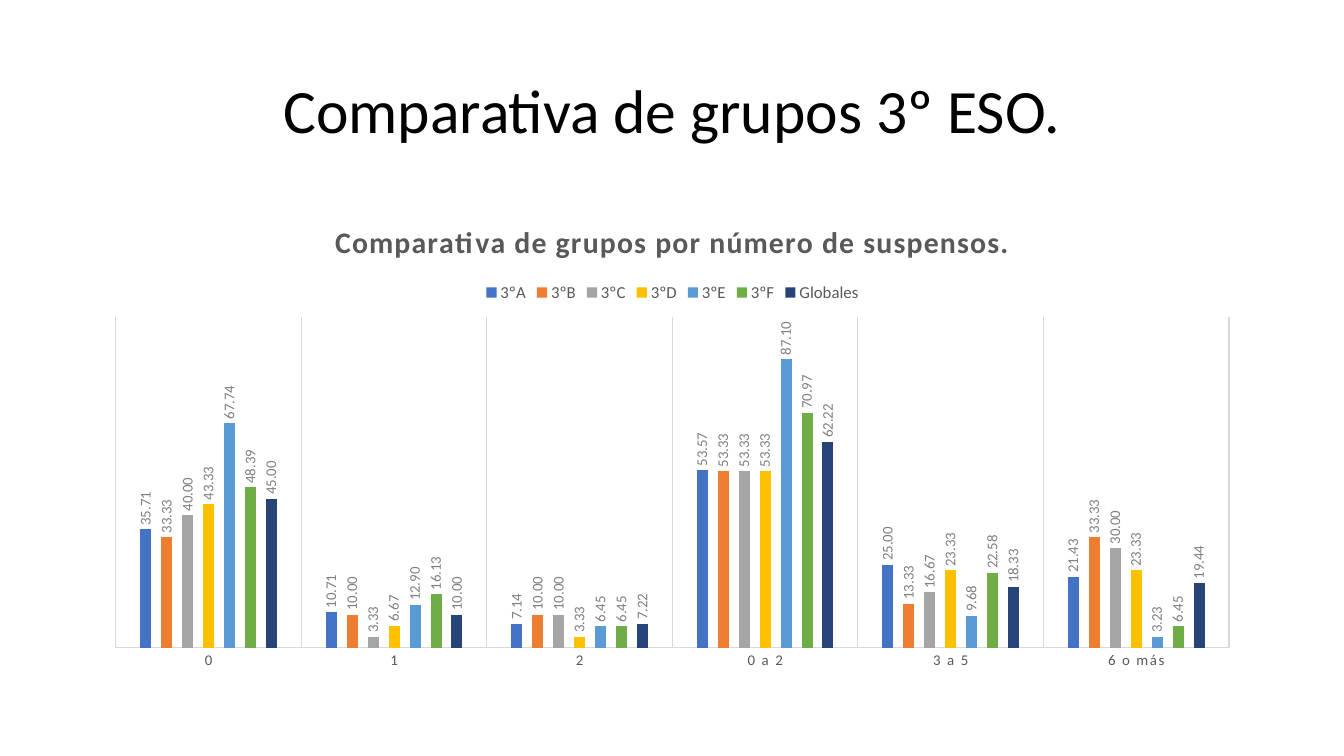
import pptx
import pptx.chart.data
import pptx.dml.color
import pptx.enum.chart
import pptx.enum.text
import pptx.oxml
import pptx.oxml.ns
import pptx.util

Inches = pptx.util.Inches
Pt = pptx.util.Pt
RGBColor = pptx.dml.color.RGBColor
enums = pptx.enum.chart

FONT = "Calibri"
BLACK = RGBColor(0x00, 0x00, 0x00)
DARK = RGBColor(0x59, 0x59, 0x59)
GRAY = RGBColor(0x80, 0x80, 0x80)
PALE = RGBColor(0xD9, 0xD9, 0xD9)

CATS = ["0", "1", "2", "0 a 2", "3 a 5", "6 o más"]
GROUPS = [
    ("3ºA", RGBColor(0x44, 0x72, 0xC4), [35.71, 10.71, 7.14, 53.57, 25, 21.43]),
    ("3ºB", RGBColor(0xED, 0x7D, 0x31), [33.33, 10, 10, 53.33, 13.33, 33.33]),
    ("3ºC", RGBColor(0xA5, 0xA5, 0xA5), [40, 3.33, 10, 53.33, 16.67, 30]),
    ("3ºD", RGBColor(0xFF, 0xC0, 0x00), [43.33, 6.67, 3.33, 53.33, 23.33, 23.33]),
    ("3ºE", RGBColor(0x5B, 0x9B, 0xD5), [67.74, 12.9, 6.45, 87.1, 9.68, 3.23]),
    ("3ºF", RGBColor(0x70, 0xAD, 0x47), [48.39, 16.13, 6.45, 70.97, 22.58, 6.45]),
    ("Globales", RGBColor(0x26, 0x44, 0x78), [45, 10, 7.22, 62.22, 18.33, 19.44]),
]


def set_font(font, size, color, bold=False):
    font.name = FONT
    font.size = Pt(size)
    font.bold = bold
    font.color.rgb = color


def set_line(line):
    line.color.rgb = PALE
    line.width = Pt(0.75)


def add_title(slide, text):
    box = slide.shapes.add_textbox(Inches(0.92), Inches(0.4), Inches(11.5), Inches(1.45))
    frame = box.text_frame
    frame.word_wrap = True
    frame.vertical_anchor = pptx.enum.text.MSO_ANCHOR.MIDDLE
    para = frame.paragraphs[0]
    para.alignment = pptx.enum.text.PP_ALIGN.CENTER
    para.line_spacing = 0.9
    run = para.add_run()
    run.text = text
    set_font(run.font, 44, BLACK)


def add_chart(slide):
    data = pptx.chart.data.CategoryChartData(number_format="0.00")
    data.categories = CATS
    for name, _, vals in GROUPS:
        data.add_series(name, vals)
    frame = slide.shapes.add_chart(
        enums.XL_CHART_TYPE.COLUMN_CLUSTERED,
        Inches(0.92), Inches(2), Inches(11.5), Inches(4.76), data)
    chart = frame.chart
    set_font(chart.font, 10, BLACK)
    return chart


def style_head(chart, text):
    chart.has_title = True
    run = chart.chart_title.text_frame.paragraphs[0].add_run()
    run.text = text
    set_font(run.font, 21.28, DARK, True)
    run.font._element.set("spc", "100")
    chart.has_legend = True
    legend = chart.legend
    legend.position = enums.XL_LEGEND_POSITION.TOP
    legend.include_in_layout = False
    set_font(legend.font, 12, DARK)


def style_axes(chart):
    axis = chart.category_axis
    axis.major_tick_mark = enums.XL_TICK_MARK.NONE
    axis.has_major_gridlines = True
    set_line(axis.major_gridlines.format.line)
    set_line(axis.format.line)
    set_font(axis.tick_labels.font, 10.6, DARK)
    axis.tick_labels.font._element.set("spc", "120")
    scale = chart.value_axis
    scale.minimum_scale = 0
    scale.maximum_scale = 100
    scale.has_major_gridlines = False
    scale.visible = False


def style_bars(chart):
    plot = chart.plots[0]
    plot.gap_width = 444
    plot.overlap = -90
    plot.vary_by_categories = False
    for bars, (_, color, _) in zip(plot.series, GROUPS):
        bars.format.fill.solid()
        bars.format.fill.fore_color.rgb = color
        labels = bars.data_labels
        labels.show_value = True
        labels.position = enums.XL_LABEL_POSITION.OUTSIDE_END
        labels.number_format = "0.00"
        labels.number_format_is_linked = False
        set_font(labels.font, 10.6, GRAY)
        body = labels._element.find(".//" + pptx.oxml.ns.qn("a:bodyPr"))
        body.set("rot", "-5400000")
        body.set("vert", "horz")


def place_plot(chart):
    area = chart._chartSpace.chart.plotArea
    for old in area.findall(pptx.oxml.ns.qn("c:layout")):
        area.remove(old)
    rules = [("layoutTarget", "inner"), ("xMode", "edge"), ("yMode", "edge"),
             ("x", 0.02), ("y", 0.24), ("w", 0.96), ("h", 0.69)]
    parts = "".join(f'<c:{tag} val="{val}"/>' for tag, val in rules)
    area.insert(0, pptx.oxml.parse_xml(
        f'<c:layout {pptx.oxml.ns.nsdecls("c")}>'
        f'<c:manualLayout>{parts}</c:manualLayout></c:layout>'))


def main():
    deck = pptx.Presentation()
    deck.slide_width = Inches(13.33)
    deck.slide_height = Inches(7.5)
    slide = deck.slides.add_slide(deck.slide_layouts[6])
    add_title(slide, "Comparativa de grupos 3º ESO.")
    chart = add_chart(slide)
    style_head(chart, "Comparativa de grupos por número de suspensos.")
    style_axes(chart)
    style_bars(chart)
    place_plot(chart)
    deck.save("out.pptx")


if __name__ == "__main__":
    main()
